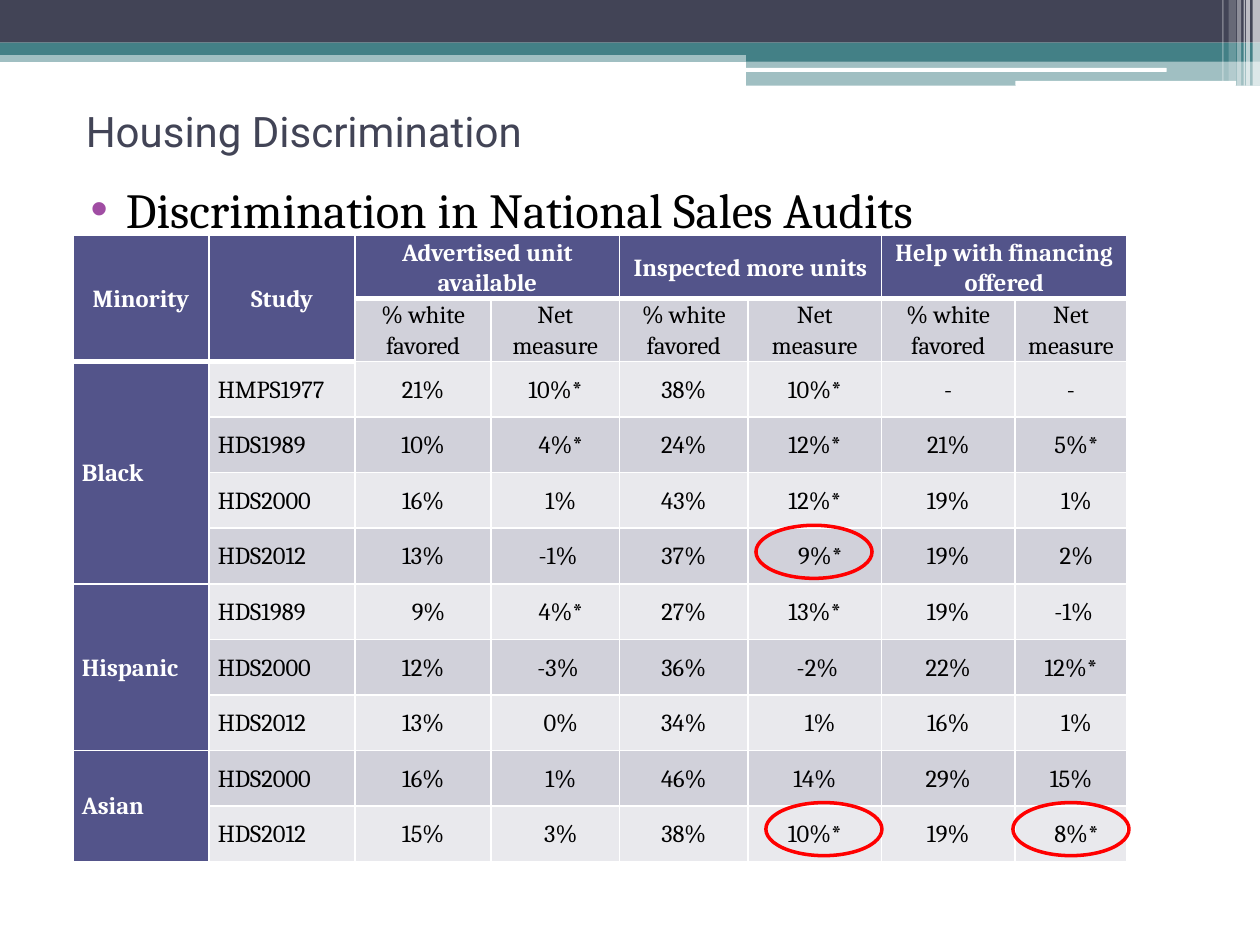
from lxml.etree import SubElement
from pptx import Presentation
from pptx.dml.color import RGBColor
from pptx.enum.shapes import MSO_SHAPE
from pptx.enum.text import MSO_ANCHOR, PP_ALIGN
from pptx.oxml.ns import qn
from pptx.util import Cm, Pt

SLATE = RGBColor(0x42, 0x44, 0x56)
TEAL = RGBColor(0x43, 0x80, 0x86)
WHITE = RGBColor(0xFF, 0xFF, 0xFF)
BLACK = RGBColor(0x00, 0x00, 0x00)
PURPLE = RGBColor(0xA0, 0x4D, 0xA3)
INDIGO = RGBColor(0x53, 0x54, 0x8A)
DARK_BAND = RGBColor(0xD1, 0xD1, 0xDA)
LIGHT_BAND = RGBColor(0xE9, 0xE9, 0xED)
RED = RGBColor(0xFF, 0x00, 0x00)

BANDS = [
    (0, 1.02, 25.4, 0.23, TEAL, 50),
    (0, 0, 25.4, 0.86, SLATE, 100),
    (0, 0.86, 25.4, 0.25, TEAL, 100),
    (15.04, 0.99, 10.36, 0.25, TEAL, 100),
    (15.04, 1.22, 10.36, 0.51, TEAL, 50),
]
ROUNDED_BARS = [(15.01, 1.37, 8.51, 0.08), (20.47, 1.63, 4.45, 0.1)]
STRIPES = [
    (25.25, 0.15, 1.73, 65),
    (25.12, 0.08, 1.73, 65),
    (25.07, 0.03, 1.73, 60),
    (24.94, 0.08, 1.73, 40),
    (24.77, 0.15, 1.63, 20),
    (24.64, 0.03, 1.63, 30),
]
COLUMN_WIDTHS = [2.74, 2.95, 2.74, 2.59, 2.59, 2.69, 2.69, 2.26]
MEASURES = ["Advertised unit available", "Inspected more units", "Help with financing offered"]
AUDITS = {
    "Black": [
        ("HMPS1977", "21%", "10%*", "38%", "10%*", "-", "-"),
        ("HDS1989", "10%", "4%*", "24%", "12%*", "21%", "5%*"),
        ("HDS2000", "16%", "1%", "43%", "12%*", "19%", "1%"),
        ("HDS2012", "13%", "-1%", "37%", "9%*", "19%", "2%"),
    ],
    "Hispanic": [
        ("HDS1989", "9%", "4%*", "27%", "13%*", "19%", "-1%"),
        ("HDS2000", "12%", "-3%", "36%", "-2%", "22%", "12%*"),
        ("HDS2012", "13%", "0%", "34%", "1%", "16%", "1%"),
    ],
    "Asian": [
        ("HDS2000", "16%", "1%", "46%", "14%", "29%", "15%"),
        ("HDS2012", "15%", "3%", "38%", "10%*", "19%", "8%*"),
    ],
}
HIGHLIGHTS = [(15.24, 10.59), (15.44, 16.18), (20.42, 16.18)]


def write_text(frame, text, font="Cambria", size=14, color=BLACK, bold=False,
               align=PP_ALIGN.LEFT, spacing=None):
    """Write one formatted paragraph into a text frame and return it."""
    para = frame.paragraphs[0]
    para.alignment = align
    para.line_spacing = spacing
    span = para.add_run()
    span.text = text
    span.font.name = font
    span.font.size = Pt(size)
    span.font.bold = bold
    span.font.color.rgb = color
    return para


def add_block(page, kind, left, top, width, height, color, opacity=100):
    """Add a filled shape without outline."""
    block = page.shapes.add_shape(kind, Cm(left), Cm(top), Cm(width), Cm(height))
    block.shadow.inherit = False
    block.fill.solid()
    block.fill.fore_color.rgb = color
    block.line.fill.background()
    if opacity < 100:
        tint = block.fill._xPr.find(".//" + qn("a:srgbClr"))
        SubElement(tint, qn("a:alpha"), val=str(opacity * 1000))


def add_banner(page):
    """Draw the bands, bars and stripes along the top."""
    for left, top, width, height, color, opacity in BANDS:
        add_block(page, MSO_SHAPE.RECTANGLE, left, top, width, height, color, opacity)
    for bar in ROUNDED_BARS:
        add_block(page, MSO_SHAPE.ROUNDED_RECTANGLE, *bar, WHITE)
    for left, width, height, opacity in STRIPES:
        add_block(page, MSO_SHAPE.RECTANGLE, left, 0, width, height, WHITE, opacity)


def add_title(page, text):
    """Place and fill the title placeholder."""
    title = page.shapes.title
    title.left, title.top, title.width, title.height = Cm(1.27), Cm(1.9), Cm(22.86), Cm(1.47)
    title.text_frame.vertical_anchor = MSO_ANCHOR.MIDDLE
    title.text_frame.margin_left = Cm(0.46)
    write_text(title.text_frame, text, font="Roboto", size=24, color=SLATE)


def add_bullet(page, text):
    """Add the bulleted heading above the table."""
    box = page.shapes.add_textbox(Cm(1.27), Cm(3.38), Cm(22.86), Cm(14.88))
    box.text_frame.word_wrap = True
    box.text_frame.margin_top = Cm(0.23)
    para = write_text(box.text_frame, text, size=28)
    props = para._p.get_or_add_pPr()
    props.set("marL", str(Cm(1.02)))
    props.set("indent", str(Cm(-0.71)))
    bullet_color = SubElement(props, qn("a:buClr"))
    SubElement(bullet_color, qn("a:srgbClr"), val=str(PURPLE))
    SubElement(props, qn("a:buFont"), typeface="Arial")
    SubElement(props, qn("a:buChar"), char="•")


def set_borders(cell, top=1, bottom=1):
    """Give a cell white borders of the given widths in points."""
    props = cell._tc.get_or_add_tcPr()
    for side, width in (("L", 1), ("R", 1), ("T", top), ("B", bottom)):
        line = SubElement(props, qn(f"a:ln{side}"), w=str(Pt(width)))
        fill = SubElement(line, qn("a:solidFill"))
        SubElement(fill, qn("a:srgbClr"), val=str(WHITE))


def fill_cell(cell, text, fill, align=PP_ALIGN.CENTER, indent=0):
    """Fill a cell with colour and text, bold white on the indigo headers."""
    header = fill == INDIGO
    cell.fill.solid()
    cell.fill.fore_color.rgb = fill
    cell.vertical_anchor = MSO_ANCHOR.MIDDLE
    cell.margin_left, cell.margin_right = Cm(0.18 + indent), Cm(0.18)
    cell.margin_top = cell.margin_bottom = 0
    write_text(cell.text_frame, text, color=WHITE if header else BLACK, bold=header,
               align=align, spacing=1.07)


def value_indent(value):
    """Return the left indent that lines up short values with two-digit ones."""
    if value.startswith("-"):
        return 0.11 if len(value) > 1 else 0
    return 0.22 if len(value.rstrip("*")) == 2 else 0


def fill_header(table):
    """Fill the two header rows."""
    for column, text in enumerate(("Minority", "Study")):
        table.cell(0, column).merge(table.cell(1, column))
        fill_cell(table.cell(0, column), text, INDIGO)
    for column, text in zip((2, 4, 6), MEASURES):
        table.cell(0, column).merge(table.cell(0, column + 1))
        fill_cell(table.cell(0, column), text, INDIGO)
        fill_cell(table.cell(1, column), "% white favored", DARK_BAND)
        fill_cell(table.cell(1, column + 1), "Net measure", DARK_BAND)


def fill_audits(table):
    """Fill the rows of every minority group."""
    row = 2
    for minority, studies in AUDITS.items():
        table.cell(row, 0).merge(table.cell(row + len(studies) - 1, 0))
        fill_cell(table.cell(row, 0), minority, INDIGO, PP_ALIGN.LEFT)
        for study, *values in studies:
            band = DARK_BAND if row % 2 else LIGHT_BAND
            fill_cell(table.cell(row, 1), study, band, PP_ALIGN.LEFT)
            for column, value in enumerate(values, 2):
                fill_cell(table.cell(row, column), value, band, indent=value_indent(value))
            row += 1


def add_audit_table(page):
    """Add the table of audit results."""
    rows = 2 + sum(len(studies) for studies in AUDITS.values())
    table = page.shapes.add_table(rows, len(COLUMN_WIDTHS), Cm(1.47), Cm(4.75),
                                  Cm(21.25), Cm(12.39)).table
    for column, width in zip(table.columns, COLUMN_WIDTHS):
        column.width = Cm(width)
    for index, row in enumerate(table.rows):
        row.height = Cm(1.12 if index else 1.19)
        for column, cell in enumerate(row.cells):
            header_end = 1 if column < 2 else 0
            set_borders(cell, top=3 if index == header_end + 1 else 1,
                        bottom=3 if index <= header_end else 1)
    fill_header(table)
    fill_audits(table)


def add_highlight(page, left, top):
    """Circle one table value in red."""
    ring = page.shapes.add_shape(MSO_SHAPE.OVAL, Cm(left), Cm(top), Cm(2.34), Cm(1.07))
    ring.shadow.inherit = False
    ring.fill.background()
    ring.line.color.rgb = RED
    ring.line.width = Pt(2)


def main():
    """Build and save the slide."""
    deck = Presentation()
    deck.slide_width, deck.slide_height = Cm(25.4), Cm(19.05)
    page = deck.slides.add_slide(deck.slide_layouts[5])
    add_banner(page)
    add_title(page, "Housing Discrimination")
    add_bullet(page, "Discrimination in National Sales Audits")
    add_audit_table(page)
    for left, top in HIGHLIGHTS:
        add_highlight(page, left, top)
    deck.save("out.pptx")


if __name__ == "__main__":
    main()
